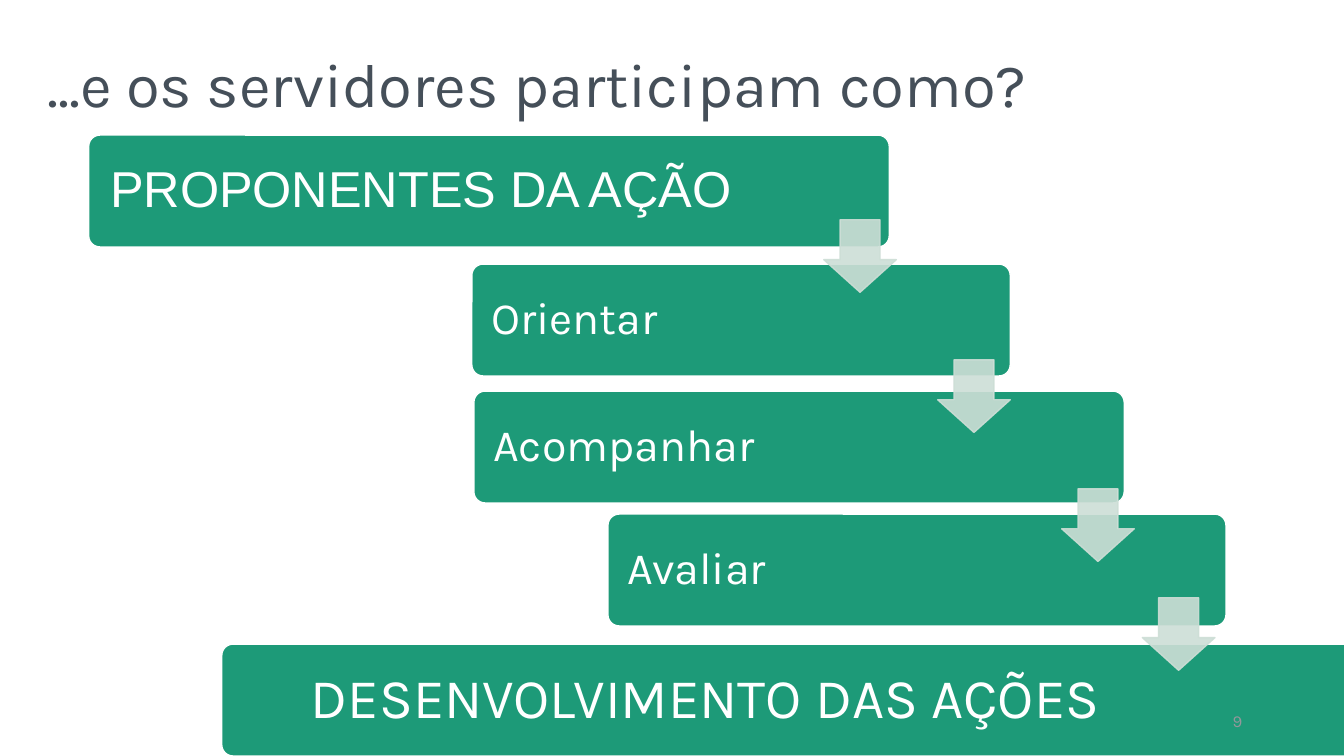
from lxml import etree
from pptx import Presentation
from pptx.dml.color import RGBColor
from pptx.enum.shapes import MSO_SHAPE
from pptx.enum.text import MSO_ANCHOR, PP_ALIGN
from pptx.oxml.ns import qn
from pptx.util import Inches, Pt

GREEN, PALE_GREEN, WHITE = "1D9A78", "CDDED6", "FFFFFF"
SLATE, GRAY = "454F59", "94979B"
STEP_HEIGHT = 1.11
ARROW_SIZE = 0.72

# text, left, top, width, font, size, left inset, right inset, alignment
STEPS = [
    ("PROPONENTES DA AÇÃO", 0.88, 1.34, 7.94, "Arial", 36, 0.18, 1.18, PP_ALIGN.LEFT),
    ("Orientar", 4.68, 2.62, 5.34, "Karla", 32, 0.16, 0.95, PP_ALIGN.LEFT),
    ("Acompanhar", 4.7, 3.88, 6.45, "Karla", 32, 0.16, 1.1, PP_ALIGN.LEFT),
    ("Avaliar", 6.03, 5.1, 6.13, "Karla", 32, 0.16, 1.07, PP_ALIGN.LEFT),
    ("DESENVOLVIMENTO DAS AÇÕES", 2.2, 6.39, 11.24, "Karla", 40, 0.2, 1.85, PP_ALIGN.CENTER),
]
ARROW_POSITIONS = [(8.17, 2.18), (9.3, 3.57), (10.53, 4.85), (11.33, 5.93)]


def color(hex_code):
    return RGBColor.from_string(hex_code)


def write(shape, text, font, size, hex_code, align=PP_ALIGN.LEFT, spacing=1.0):
    frame = shape.text_frame
    frame.word_wrap = True
    frame.vertical_anchor = MSO_ANCHOR.MIDDLE
    paragraph = frame.paragraphs[0]
    paragraph.text = text
    paragraph.alignment = align
    paragraph.line_spacing = spacing
    paragraph.font.name = font
    paragraph.font.size = Pt(size)
    paragraph.font.color.rgb = color(hex_code)


def add_label(slide, box, *text_style, **layout):
    label = slide.shapes.add_textbox(*map(Inches, box))
    write(label, *text_style, **layout)


def add_filled_shape(slide, preset, box, adjustments, fill, line):
    shape = slide.shapes.add_shape(preset, *map(Inches, box))
    for index, value in enumerate(adjustments):
        shape.adjustments[index] = value
    shape.shadow.inherit = False
    shape.fill.solid()
    shape.fill.fore_color.rgb = color(fill)
    shape.line.color.rgb = color(line)
    shape.line.width = Pt(1)
    return shape


def add_step(slide, text, left, top, width, font, size, inset_left, inset_right, align):
    step = add_filled_shape(slide, MSO_SHAPE.ROUNDED_RECTANGLE,
                            (left, top, width, STEP_HEIGHT), [0.1], GREEN, WHITE)
    step.text_frame.margin_left = Inches(inset_left)
    step.text_frame.margin_right = Inches(inset_right)
    write(step, text, font, size, WHITE, align, spacing=0.9)


def add_down_arrow(slide, left, top):
    """Add a slightly transparent arrow that links two steps."""
    arrow = add_filled_shape(slide, MSO_SHAPE.DOWN_ARROW,
                             (left, top, ARROW_SIZE, ARROW_SIZE),
                             [0.55, 0.45], PALE_GREEN, PALE_GREEN)
    for tint in arrow.element.spPr.iter(qn("a:srgbClr")):
        etree.SubElement(tint, qn("a:alpha")).set("val", "90000")


def main():
    presentation = Presentation()
    presentation.slide_width = Inches(13.33)
    presentation.slide_height = Inches(7.5)
    slide = presentation.slides.add_slide(presentation.slide_layouts[6])

    add_label(slide, (0.37, 0.4, 12.38, 0.94), "...e os servidores participam como?",
              "Karla", 44, SLATE, spacing=0.9)
    for step in STEPS:
        add_step(slide, *step)
    for left, top in ARROW_POSITIONS:
        add_down_arrow(slide, left, top)
    add_label(slide, (9.42, 6.95, 3, 0.4), "9", "Karla", 12, GRAY, align=PP_ALIGN.RIGHT)

    presentation.save("out.pptx")


if __name__ == "__main__":
    main()
